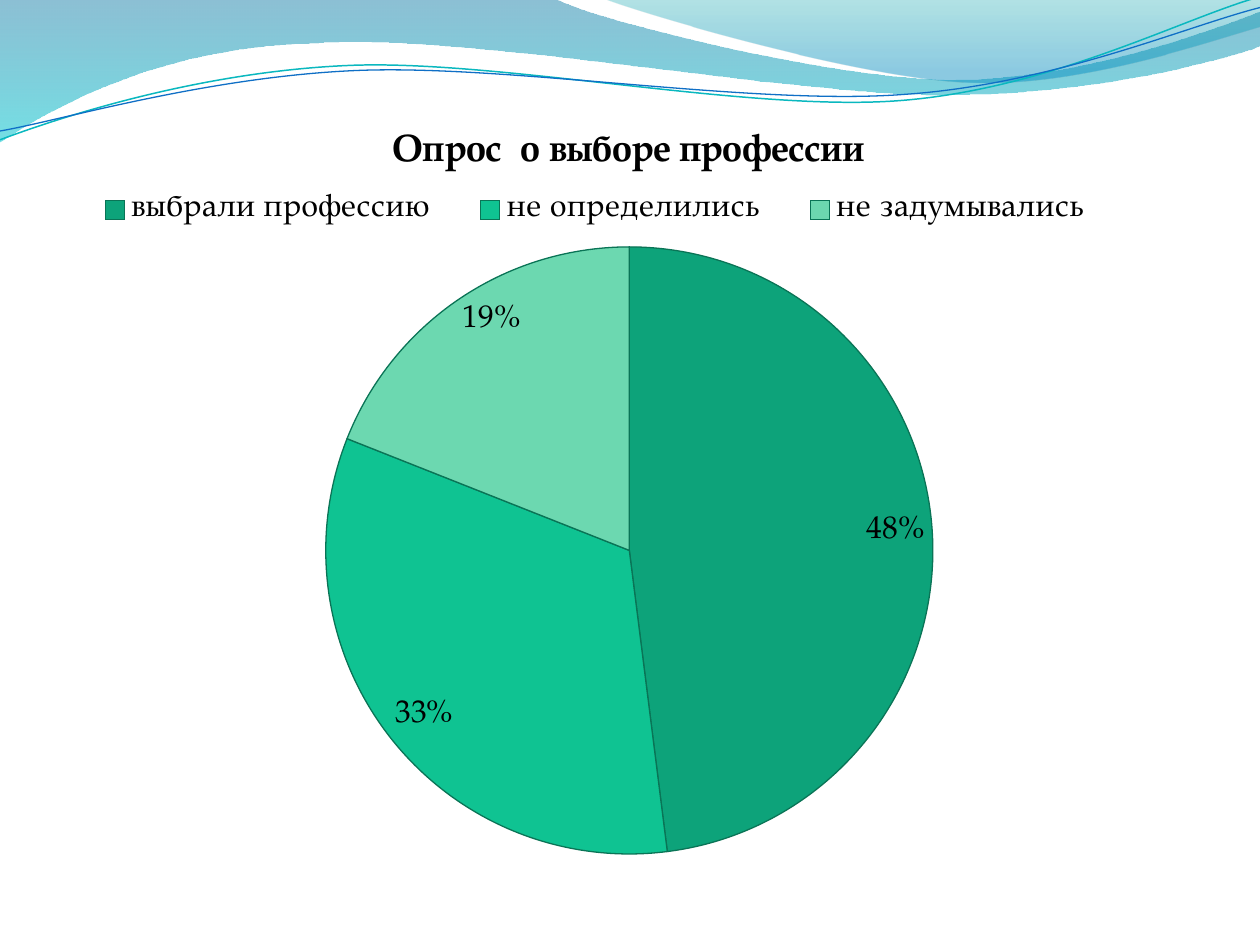
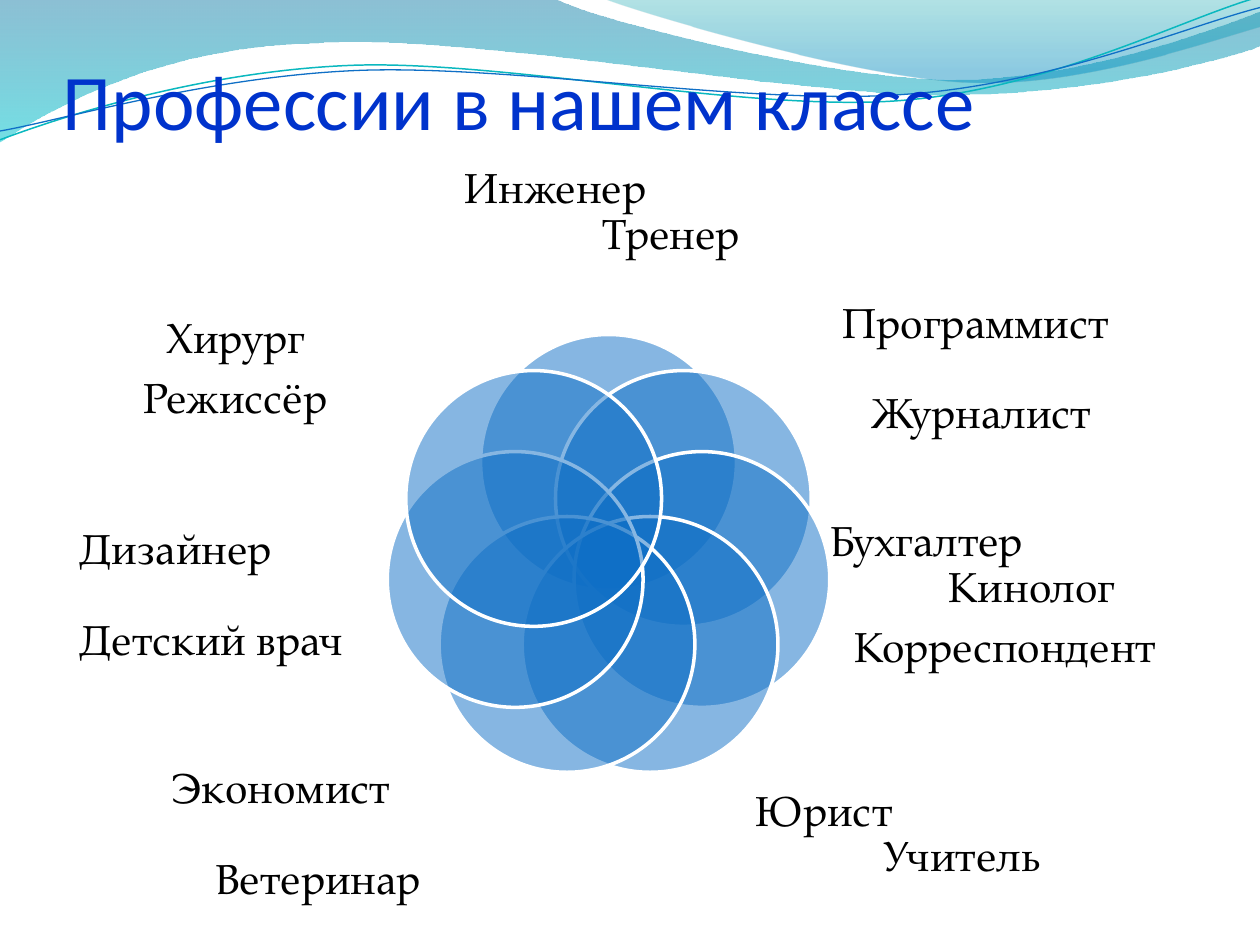
from math import cos, pi, sin

from lxml.etree import SubElement
from pptx import Presentation
from pptx.chart.data import CategoryChartData
from pptx.dml.color import RGBColor
from pptx.enum.chart import XL_CHART_TYPE, XL_LABEL_POSITION, XL_LEGEND_POSITION
from pptx.enum.shapes import MSO_SHAPE
from pptx.enum.text import MSO_ANCHOR, PP_ALIGN
from pptx.oxml import parse_xml
from pptx.oxml.ns import nsdecls, qn
from pptx.util import Inches, Pt

BLACK = RGBColor(0x00, 0x00, 0x00)
WHITE = RGBColor(0xFF, 0xFF, 0xFF)
BLUE = RGBColor(0x0F, 0x6F, 0xC6)
TITLE_BLUE = RGBColor(0x00, 0x33, 0xCC)
TURQUOISE = RGBColor(0x0A, 0xB8, 0xBF)
WAVE_BLUE = RGBColor(0x00, 0x74, 0xA1)
WAVE_CYAN = RGBColor(0x00, 0xC6, 0xCF)
CREST_TEAL = RGBColor(0x00, 0xA1, 0xA9)
CREST_BLUE = RGBColor(0x00, 0x8B, 0xBF)
PIE_EDGE = RGBColor(0x0A, 0x74, 0x56)
PIE_GREENS = [RGBColor(0x0D, 0xA3, 0x7A), RGBColor(0x0F, 0xC3, 0x92),
              RGBColor(0x6C, 0xD8, 0xB0)]
BODY_FONT = "TeX Gyre Pagella"
TITLE_FONT = "Calibri"

# The slide is a grid of 100 columns and 75 rows
SLIDE_WIDTH, SLIDE_HEIGHT = Inches(10), Inches(7.5)
COLUMN, ROW = SLIDE_WIDTH / 100, SLIDE_HEIGHT / 75

# Waves: start point, then cubic curves (three points) or straight lines (one point)
FILLED_WAVES = [
    ((0, 0), [
        [(44, -0.1)],
        [(47.6, 1.7), (66.4, 6.3), (75.8, 6.3)],
        [(85.3, 6.3), (95.8, 2.6), (100, 0.9)],
        [(100.1, 3.6)],
        [(98.3, 4.4), (87, 7.6), (74.6, 7.5)],
        [(62.2, 7.5), (38.2, 2.8), (25.7, 3.4)],
        [(12.9, 3.6), (4.6, 8.3), (-0.1, 11.3)],
    ], [(WAVE_BLUE, 0, 45), (WAVE_CYAN, 1, 55)]),
    ((47.9, -0.1), [
        [(50.9, 1.1), (68.2, 6.2), (76.9, 6.5)],
        [(85.6, 6.9), (96.1, 3.2), (100, 2.1)],
        [(100, 0)],
    ], [(CREST_TEAL, 0, 30), (CREST_BLUE, 0.8, 45)]),
]
LINE_WAVES = [
    ((0, 11.1), [
        [(4.8, 9.3), (15.8, 5.7), (27.7, 5.2)],
        [(39.5, 4.7), (59.3, 8.9), (71.3, 8)],
        [(83.3, 7.1), (93.8, 1.5), (99.8, -0.2)],
    ], TURQUOISE, 0.85),
    ((0, 10.4), [
        [(4.7, 9.6), (16.4, 6.1), (28.3, 5.6)],
        [(40.3, 5.1), (59.7, 8.4), (71.7, 7.5)],
        [(83.6, 6.7), (94.1, 2.1), (100, 0.6)],
    ], BLUE, 0.75),
]


def draw_wave(slide, start, segments, close):
    """Draw the outline, then turn each run of three points into one cubic curve."""
    points = [start] + [point for segment in segments for point in segment]
    emu_points = [(round(x * COLUMN), round(y * ROW)) for x, y in points]
    builder = slide.shapes.build_freeform(*emu_points[0], scale=1.0)
    builder.add_line_segments(emu_points[1:], close=close)
    shape = builder.convert_to_shape()
    shape.shadow.inherit = False
    line_steps = iter(list(shape._element.spPr.iter(qn("a:lnTo"))))
    for segment in segments:
        steps = [next(line_steps) for _ in segment]
        if len(steps) == 3:
            curve = parse_xml(f"<a:cubicBezTo {nsdecls('a')}/>")
            steps[0].addprevious(curve)
            for step in steps:
                curve.append(step[0])
                step.getparent().remove(step)
    return shape


def set_opacity(shape, percents):
    """Give the shape's first colours, in order, these opacities."""
    colors = list(shape._element.spPr.iter(qn("a:srgbClr")))
    for color, percent in zip(colors, percents):
        SubElement(color, qn("a:alpha")).set("val", str(percent * 1000))


presentation = Presentation()
presentation.slide_width, presentation.slide_height = SLIDE_WIDTH, SLIDE_HEIGHT
blank_layout = presentation.slide_layouts[6]
survey_slide = presentation.slides.add_slide(blank_layout)
professions_slide = presentation.slides.add_slide(blank_layout)

# Wave band, moved to the layout that both slides share
waves = []
for start, segments, stops in FILLED_WAVES:
    wave = draw_wave(survey_slide, start, segments, close=True)
    wave.line.fill.background()
    wave.fill.gradient()
    wave.fill.gradient_angle = 270
    for gradient_stop, (color, position, _) in zip(wave.fill.gradient_stops, stops):
        gradient_stop.color.rgb = color
        gradient_stop.position = position
    set_opacity(wave, [opacity for _, _, opacity in stops])
    waves.append(wave)
for start, segments, color, width in LINE_WAVES:
    wave = draw_wave(survey_slide, start, segments, close=False)
    wave.fill.background()
    wave.line.color.rgb = color
    wave.line.width = Pt(width)
    waves.append(wave)
for placeholder in list(blank_layout.placeholders):
    placeholder._element.getparent().remove(placeholder._element)
for wave in waves:
    blank_layout.shapes._spTree.append(wave._element)

# Slide 1: survey pie
survey = CategoryChartData()
survey.categories = ["выбрали профессию", "не определились", "не задумывались"]
survey.add_series("Series 1", [48, 33, 19])
chart = survey_slide.shapes.add_chart(
    XL_CHART_TYPE.PIE, round(5 * COLUMN), round(8.4 * ROW),
    round(89.9 * COLUMN), round(60.8 * ROW), survey).chart
chart.font.name = BODY_FONT
chart.font.size = Pt(18)
chart.font.color.rgb = BLACK

chart.has_title = True
chart.chart_title.include_in_layout = False
title_paragraph = chart.chart_title.text_frame.paragraphs[0]
title_paragraph.text = "Опрос  о выборе профессии"
title_paragraph.font.name = BODY_FONT
title_paragraph.font.size = Pt(21.6)
title_paragraph.font.bold = True
title_paragraph.font.color.rgb = BLACK

chart.has_legend = True
chart.legend.position = XL_LEGEND_POSITION.TOP
chart.legend.include_in_layout = False

pie = chart.plots[0]
pie.vary_by_categories = True
pie.has_data_labels = True
labels = pie.data_labels
labels.show_percentage = True
labels.show_value = False
labels.number_format = "0%"
labels.number_format_is_linked = False
labels.position = XL_LABEL_POSITION.INSIDE_END
for index, green in enumerate(PIE_GREENS):
    slice_format = pie.series[0].points[index].format
    slice_format.fill.solid()
    slice_format.fill.fore_color.rgb = green
    slice_format.line.color.rgb = PIE_EDGE
    slice_format.line.width = Pt(0.75)

# Places of the chart parts, in percent of the chart
chart_parts = [
    ("c:title", "c:tx", {"x": 28.5, "y": 2.2}),
    ("c:legend", "c:legendPos", {"x": 0.2, "y": 10.6, "w": 93.5, "h": 6}),
    ("c:plotArea", None, {"x": 23.2, "y": 18.4, "w": 53.6, "h": 79.3}),
]
for part_tag, previous_tag, percents in chart_parts:
    part = chart._chartSpace.find(f"{qn('c:chart')}/{qn(part_tag)}")
    for old_layout in part.findall(qn("c:layout")):
        part.remove(old_layout)
    layout = parse_xml(f"<c:layout {nsdecls('c')}><c:manualLayout/></c:layout>")
    manual = layout[0]
    if part_tag == "c:plotArea":
        SubElement(manual, qn("c:layoutTarget")).set("val", "inner")
    for axis in ("x", "y"):
        SubElement(manual, qn(f"c:{axis}Mode")).set("val", "edge")
    for name, percent in percents.items():
        SubElement(manual, qn(f"c:{name}")).set("val", str(percent / 100))
    if previous_tag:
        part.find(qn(previous_tag)).addnext(layout)
    else:
        part.insert(0, layout)

# Slide 2: ring of seven circles with professions around it
RING_X, RING_Y, RING_RADIUS, DIAMETER = 48.3, 44.3, 7.6, 20.3
for index in range(7):
    angle = 2 * pi * index / 7
    left = RING_X + RING_RADIUS * sin(angle) - DIAMETER / 2
    top = RING_Y - RING_RADIUS * cos(angle) - DIAMETER / 2
    circle = professions_slide.shapes.add_shape(
        MSO_SHAPE.OVAL, round(left * COLUMN), round(top * ROW),
        round(DIAMETER * COLUMN), round(DIAMETER * ROW))
    circle.shadow.inherit = False
    circle.fill.solid()
    circle.fill.fore_color.rgb = BLUE
    circle.line.color.rgb = WHITE
    circle.line.width = Pt(2)
    set_opacity(circle, [50])

# Box, style (anchor, font, size, colour, line spacing),
# then lines: text, alignment, points before, indent in columns
LEFT, CENTER = PP_ALIGN.LEFT, PP_ALIGN.CENTER
TITLE_STYLE = (MSO_ANCHOR.BOTTOM, TITLE_FONT, 45, TITLE_BLUE, 1)
LABEL_STYLE = (MSO_ANCHOR.MIDDLE, BODY_FONT, 24, BLACK, 0.9)
SMALL_GAP, LINE_GAP = 8.4, 26
text_boxes = [
    ((5, 2.9, 90.7, 8.7), TITLE_STYLE, [("Профессии в нашем классе", LEFT, 0, 0)]),
    ((36.7, 10.7, 23.3, 12.4), LABEL_STYLE,
     [("Инженер", LEFT, 0, 0.2), ("Тренер", LEFT, 0, 11.1)]),
    ((66.9, 22.5, 22, 13.7), LABEL_STYLE,
     [("Программист", LEFT, 0, 0), ("Журналист", CENTER, LINE_GAP, 0)]),
    ((65.6, 35.8, 28.4, 23), LABEL_STYLE,
     [("Бухгалтер", LEFT, 0, 0.3), ("Кинолог", LEFT, 0, 9.7),
      ("Корреспондент", CENTER, SMALL_GAP, 0)]),
    ((59.7, 59.6, 23.3, 13.4), LABEL_STYLE,
     [("Юрист", LEFT, 0, 0.3), ("Учитель", LEFT, 0, 10.4)]),
    ((13.6, 59.6, 23.3, 13.4), LABEL_STYLE,
     [("Экономист", LEFT, 0, 0), ("Ветеринар", CENTER, LINE_GAP, 0)]),
    ((6, 40, 21.6, 14.6), LABEL_STYLE,
     [("Дизайнер", LEFT, 0, 0.3), ("Детский врач", CENTER, LINE_GAP, 0)]),
    ((7.7, 22.5, 22, 13.7), LABEL_STYLE,
     [("Хирург", CENTER, 0, 0), ("Режиссёр", CENTER, SMALL_GAP, 0)]),
]
for (left, top, width, height), style, lines in text_boxes:
    anchor, font_name, font_size, color, line_spacing = style
    text_frame = professions_slide.shapes.add_textbox(
        round(left * COLUMN), round(top * ROW),
        round(width * COLUMN), round(height * ROW)).text_frame
    text_frame.word_wrap = True
    text_frame.vertical_anchor = anchor
    text_frame.margin_left = text_frame.margin_right = 0
    text_frame.margin_top = text_frame.margin_bottom = 0
    for index, (text, alignment, gap, indent) in enumerate(lines):
        paragraph = text_frame.add_paragraph() if index else text_frame.paragraphs[0]
        paragraph.text = text
        paragraph.alignment = alignment
        paragraph.line_spacing = line_spacing
        paragraph.space_before = Pt(gap)
        paragraph.font.name = font_name
        paragraph.font.size = Pt(font_size)
        paragraph.font.color.rgb = color
        if indent:
            paragraph._p.get_or_add_pPr().set("marL", str(round(indent * COLUMN)))

presentation.save("out.pptx")
